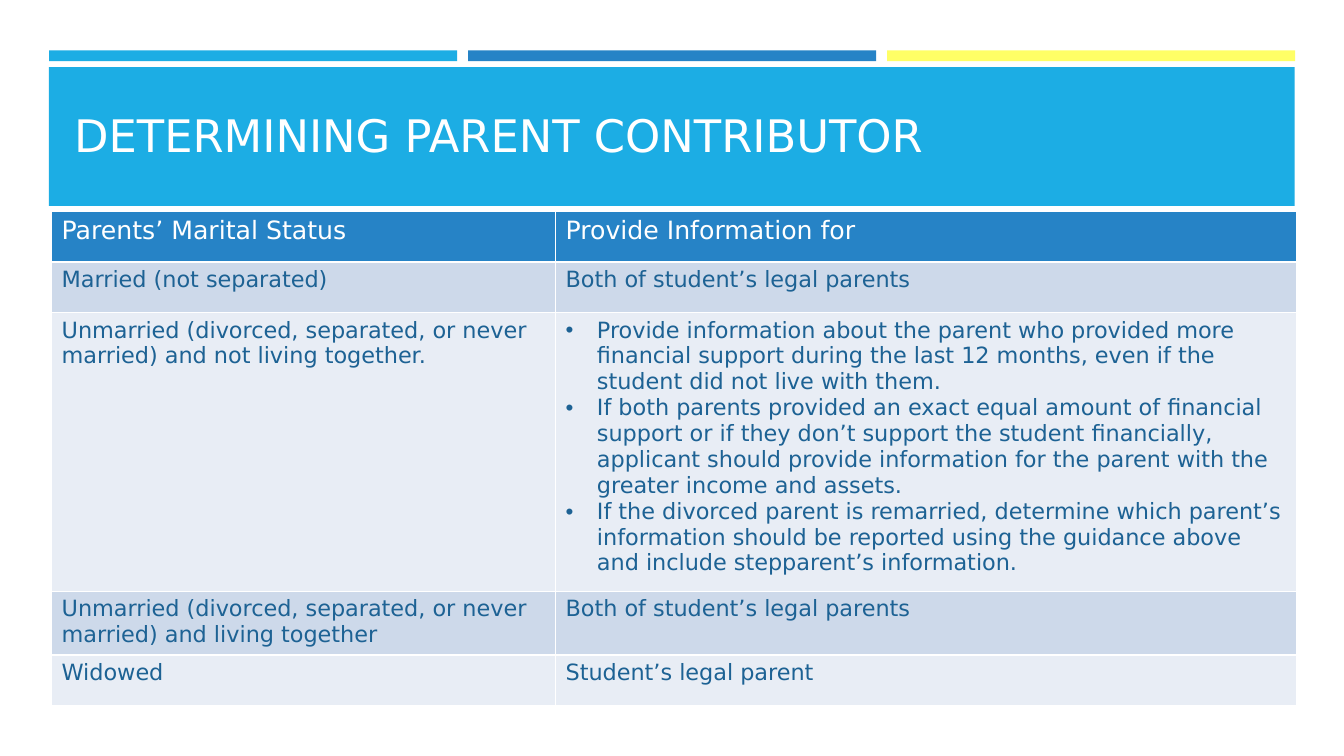
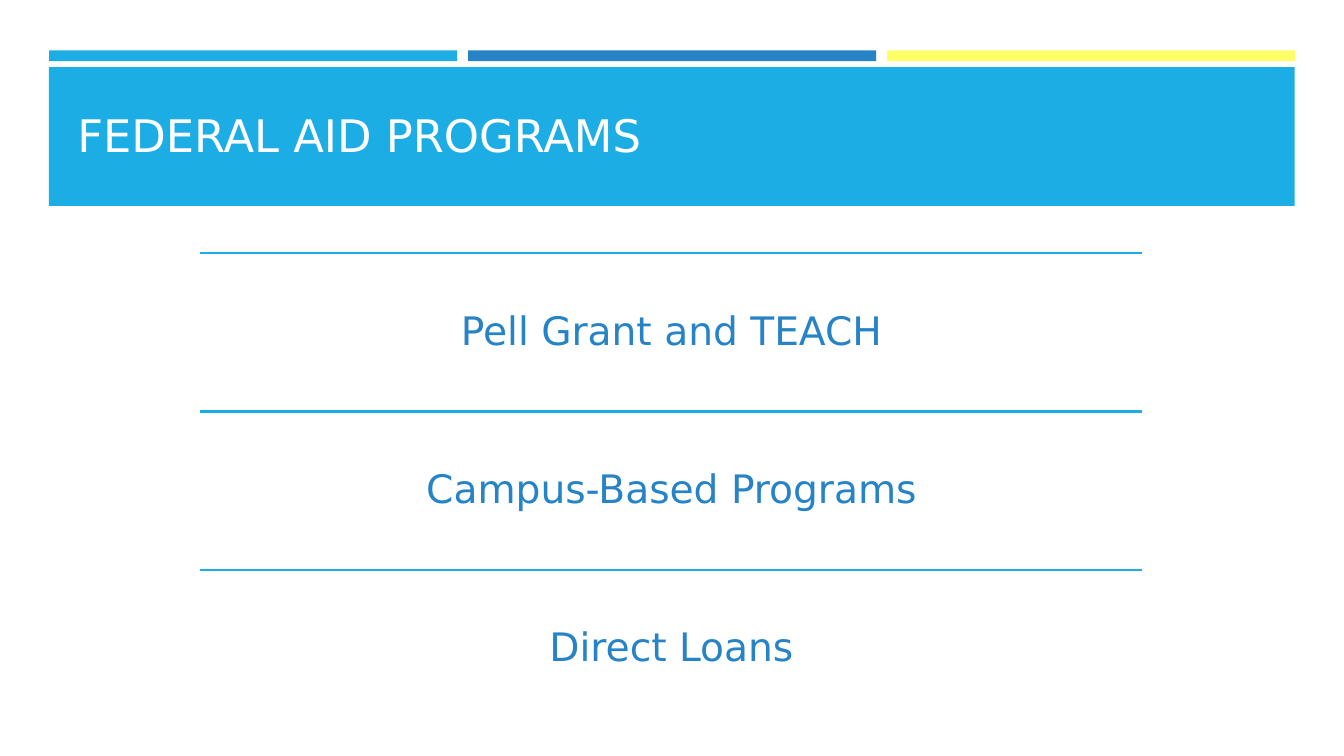
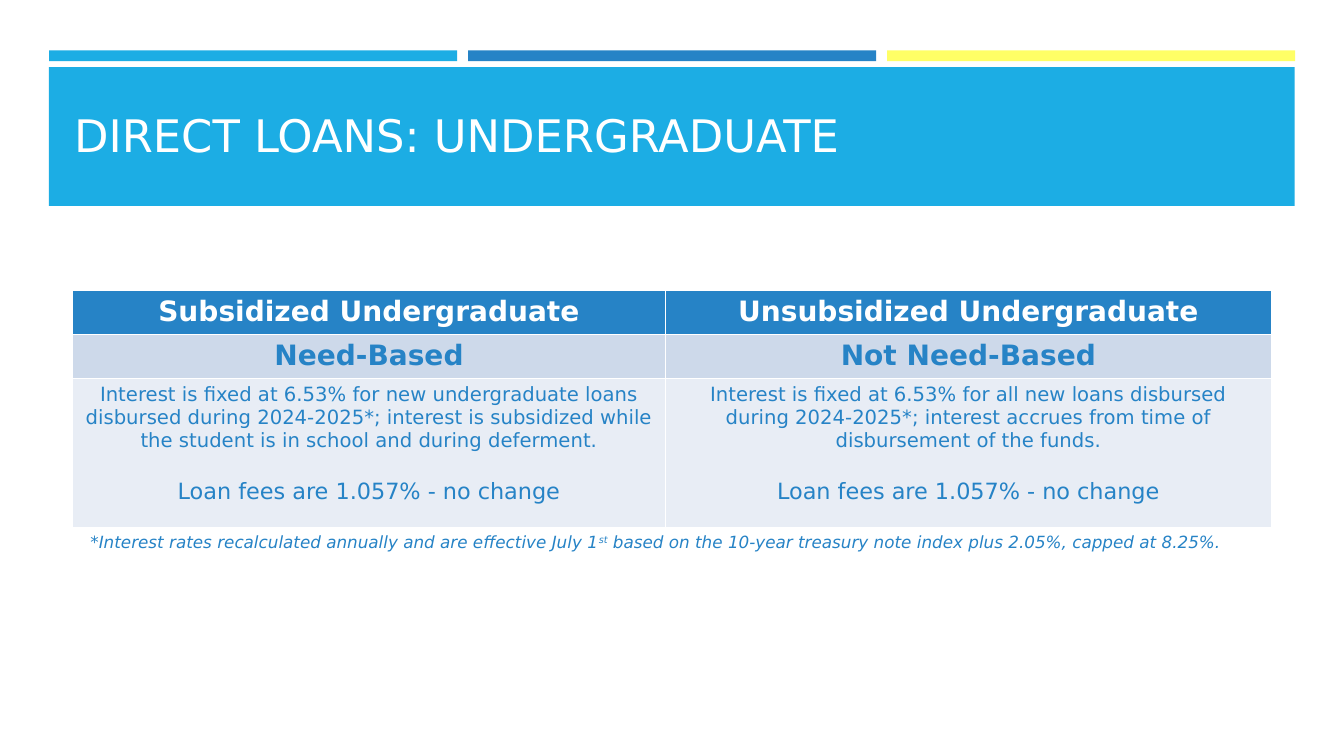
from lxml.etree import SubElement
from pptx import Presentation
from pptx.dml.color import RGBColor
from pptx.enum.shapes import MSO_CONNECTOR, MSO_SHAPE
from pptx.enum.text import MSO_ANCHOR, PP_ALIGN
from pptx.oxml.ns import qn
from pptx.util import Cm, Pt

COLORS = {
    "sky": "1CADE4",
    "blue": "2683C6",
    "yellow": "FFFF66",
    "navy": "1D6294",
    "white": "FFFFFF",
    "row_dark": "CDD9EA",
    "row_light": "E8EDF5",
}
FONT = "DejaVu Sans"


def add_run(paragraph, text, size, color, bold=False, italic=False):
    run = paragraph.add_run()
    run.text = text
    run.font.name = FONT
    run.font.size = Pt(size)
    run.font.bold = bold
    run.font.italic = italic
    run.font.color.rgb = RGBColor.from_string(COLORS[color])
    return run


def add_table(slide, left, top, widths, rows, align):
    """Add a white-ruled table; a row is height, fill, colour, size, bold, cells.

    A cell is a list of paragraphs, and lengths are in centimetres.
    """
    heights = [row[0] for row in rows]
    table = slide.shapes.add_table(
        len(rows), len(widths), Cm(left), Cm(top), Cm(sum(widths)), Cm(sum(heights))
    ).table
    for column, width in zip(table.columns, widths):
        column.width = Cm(width)
    for r, (height, fill, color, size, bold, cells) in enumerate(rows):
        table.rows[r].height = Cm(height)
        for c, texts in enumerate(cells):
            cell = table.cell(r, c)
            properties = cell._tc.get_or_add_tcPr()
            for side in ("a:lnL", "a:lnR", "a:lnT", "a:lnB"):
                border = SubElement(properties, qn(side), w=str(Pt(1)))
                border_fill = SubElement(border, qn("a:solidFill"))
                SubElement(border_fill, qn("a:srgbClr"), val=COLORS["white"])
            cell.fill.solid()
            cell.fill.fore_color.rgb = RGBColor.from_string(COLORS[fill])
            frame = cell.text_frame
            for i, text in enumerate(texts):
                paragraph = frame.add_paragraph() if i else frame.paragraphs[0]
                paragraph.alignment = align
                add_run(paragraph, text, size, color, bold)
    return table


prs = Presentation()
prs.slide_width = Cm(33.87)
prs.slide_height = Cm(19.05)

# Slides with their shared bands and titles
BAND_LEFT, BAND_WIDTH, BAND_PITCH = 1.24, 10.28, 10.56
bands = [
    (BAND_LEFT + i * BAND_PITCH, 1.27, BAND_WIDTH, 0.27, color)
    for i, color in enumerate(("sky", "blue", "yellow"))
]
bands.append((1.23, 1.69, 31.4, 3.5, "sky"))

titles = [
    ("DETERMINING PARENT CONTRIBUTOR", 0.25),
    ("FEDERAL AID PROGRAMS", 0.33),
    ("DIRECT LOANS: UNDERGRADUATE", 0.25),
]
slides = []
for title, inset in titles:
    slide = prs.slides.add_slide(prs.slide_layouts[6])
    for left, top, width, height, color in bands:
        band = slide.shapes.add_shape(
            MSO_SHAPE.RECTANGLE, Cm(left), Cm(top), Cm(width), Cm(height)
        )
        band.shadow.inherit = False
        band.fill.solid()
        band.fill.fore_color.rgb = RGBColor.from_string(COLORS[color])
        band.line.fill.background()
    frame = slide.shapes.add_textbox(Cm(1.62), Cm(2.03), Cm(30.63), Cm(2.74)).text_frame
    frame.word_wrap = True
    frame.vertical_anchor = MSO_ANCHOR.MIDDLE
    frame.margin_left = Cm(inset)
    add_run(frame.paragraphs[0], title, 32, "white")
    slides.append(slide)
contributor_slide, programs_slide, loans_slide = slides

# Determining parent contributor
guidance = [
    "Provide information about the parent who provided more financial support "
    "during the last 12 months, even if the student did not live with them.",
    "If both parents provided an exact equal amount of financial support or if they "
    "don’t support the student financially, applicant should provide information "
    "for the parent with the greater income and assets.",
    "If the divorced parent is remarried, determine which parent’s information should "
    "be reported using the guidance above and include stepparent’s information.",
]
both_parents = ["Both of student’s legal parents"]
apart = ["Unmarried (divorced, separated, or never married) and not living together."]
together = ["Unmarried (divorced, separated, or never married) and living together"]
status_rows = [
    (1.27, "blue", "white", 18, False, [["Parents’ Marital Status"], ["Provide Information for"]]),
    (1.27, "row_dark", "navy", 16, False, [["Married (not separated)"], both_parents]),
    (6.78, "row_light", "navy", 16, False, [apart, guidance]),
    (1.57, "row_dark", "navy", 16, False, [together, both_parents]),
    (1.27, "row_light", "navy", 16, False, [["Widowed"], ["Student’s legal parent"]]),
]
status_table = add_table(
    contributor_slide, 1.3, 5.33, [12.7, 18.67], status_rows, PP_ALIGN.LEFT
)
for paragraph in status_table.cell(2, 1).text_frame.paragraphs:
    properties = paragraph._p.get_or_add_pPr()
    properties.set("marL", str(Cm(0.79)))
    properties.set("indent", str(-Cm(0.79)))
    SubElement(properties, qn("a:buFont"), typeface="Arial")
    SubElement(properties, qn("a:buChar"), char="•")

# Federal aid programs
PROGRAM_LEFT, PROGRAM_TOP, PROGRAM_WIDTH, PROGRAM_HEIGHT = 5.05, 6.38, 23.74, 3.99
for i, program in enumerate(("Pell Grant and TEACH", "Campus-Based Programs", "Direct Loans")):
    top = Cm(PROGRAM_TOP + i * PROGRAM_HEIGHT)
    rule = programs_slide.shapes.add_connector(
        MSO_CONNECTOR.STRAIGHT, Cm(PROGRAM_LEFT), top, Cm(PROGRAM_LEFT + PROGRAM_WIDTH), top
    )
    rule.line.color.rgb = RGBColor.from_string(COLORS["sky"])
    rule.line.width = Pt(1.75)
    SubElement(rule._element.spPr, qn("a:effectLst"))
    frame = programs_slide.shapes.add_textbox(
        Cm(PROGRAM_LEFT), top, Cm(PROGRAM_WIDTH), Cm(PROGRAM_HEIGHT)
    ).text_frame
    frame.word_wrap = True
    frame.vertical_anchor = MSO_ANCHOR.MIDDLE
    paragraph = frame.paragraphs[0]
    paragraph.alignment = PP_ALIGN.CENTER
    paragraph.line_spacing = 0.9
    add_run(paragraph, program, 28, "blue")

# Direct loans: undergraduate
subsidized = [
    "Interest is fixed at 6.53% for new undergraduate loans disbursed during 2024-2025*; "
    "interest is subsidized while the student is in school and during deferment."
]
unsubsidized = [
    "Interest is fixed at 6.53% for all new loans disbursed during 2024-2025*; "
    "interest accrues from time of disbursement of the funds."
]
loan_rows = [
    (1.07, "blue", "white", 20, True, [["Subsidized Undergraduate"], ["Unsubsidized Undergraduate"]]),
    (1.07, "row_dark", "blue", 20, True, [["Need-Based"], ["Not Need-Based"]]),
    (3.76, "row_light", "blue", 14, False, [subsidized, unsubsidized]),
]
loan_table = add_table(loans_slide, 1.83, 7.33, [14.94, 15.27], loan_rows, PP_ALIGN.CENTER)
for column in range(2):
    fees = loan_table.cell(2, column).text_frame.add_paragraph()
    fees.alignment = PP_ALIGN.CENTER
    fees.space_before = Pt(18.6)
    add_run(fees, "Loan fees are 1.057% - no change", 16, "blue")

footnote = loans_slide.shapes.add_textbox(Cm(2.03), Cm(13.28), Cm(29.64), Cm(0.77)).text_frame
footnote.word_wrap = True
note = footnote.paragraphs[0]
add_run(note, "*Interest rates recalculated annually and are effective July 1", 12, "blue", italic=True)
ordinal = add_run(note, "st", 12, "blue", italic=True)
ordinal.font._element.set("baseline", "30000")
add_run(
    note,
    " based on the 10-year treasury note index plus 2.05%, capped at 8.25%.",
    12, "blue", italic=True,
)

prs.save("out.pptx")
